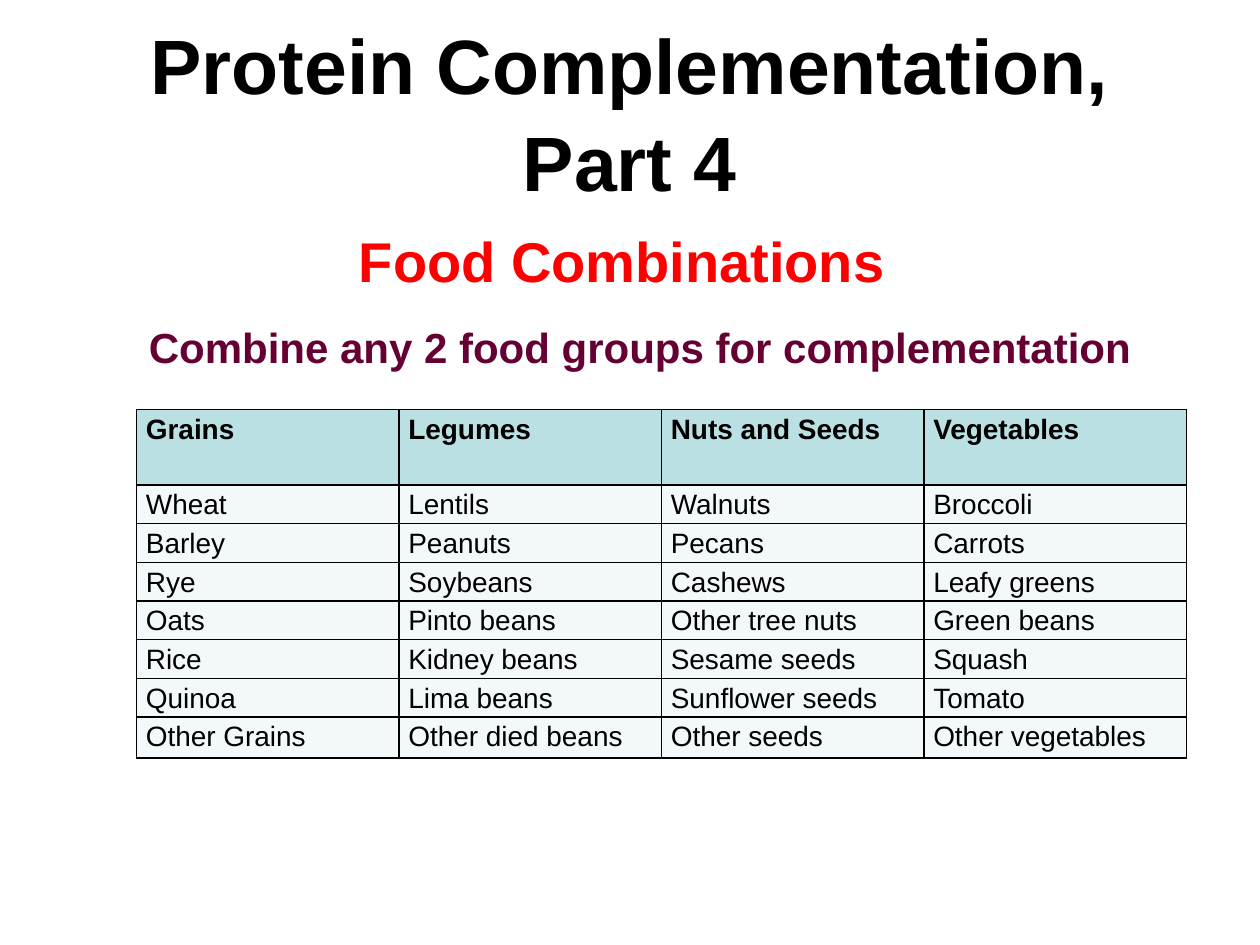
from lxml import etree
from pptx import Presentation
from pptx.dml.color import RGBColor
from pptx.enum import text
from pptx.oxml import ns
from pptx.util import Pt

BLACK = RGBColor(0x00, 0x00, 0x00)
RED = RGBColor(0xFF, 0x00, 0x00)
PLUM = RGBColor(0x66, 0x00, 0x33)
HEADER_FILL = RGBColor(0xBB, 0xE0, 0xE3)
BODY_FILL = RGBColor(0xF3, 0xF9, 0xFA)
FONT = "Arial"

TITLE = "Protein Complementation, Part 4"
SUBTITLES = [
    ("Food Combinations", (198, 126, 318, 46), 32, RED),
    ("Combine any 2 food groups for complementation", (78, 180, 606, 61), 24, PLUM),
]
FOOD_GROUPS = {
    "Grains": ["Wheat", "Barley", "Rye", "Oats", "Rice", "Quinoa", "Other Grains"],
    "Legumes": ["Lentils", "Peanuts", "Soybeans", "Pinto beans", "Kidney beans",
                "Lima beans", "Other died beans"],
    "Nuts and Seeds": ["Walnuts", "Pecans", "Cashews", "Other tree nuts",
                       "Sesame seeds", "Sunflower seeds", "Other seeds"],
    "Vegetables": ["Broccoli", "Carrots", "Leafy greens", "Green beans", "Squash",
                   "Tomato", "Other vegetables"],
}
ROW_HEIGHTS = [43.2] + [22] * 5 + [20.5, 23.5]
COLUMN_WIDTH = 150
TABLE_LEFT, TABLE_TOP = 78, 234


def write(frame, content, size, color, bold=True):
    frame.text = content
    paragraph = frame.paragraphs[0]
    font = paragraph.runs[0].font
    font.name, font.size, font.bold = FONT, Pt(size), bold
    font.color.rgb = color
    return paragraph


def add_borders(cell):
    properties = cell._tc.get_or_add_tcPr()
    for side in ("lnL", "lnR", "lnT", "lnB"):
        line = etree.SubElement(properties, ns.qn(f"a:{side}"), w=str(Pt(1)))
        fill = etree.SubElement(line, ns.qn("a:solidFill"))
        etree.SubElement(fill, ns.qn("a:srgbClr"), val=str(BLACK))


def add_title(slide):
    title = slide.shapes.title
    title.left, title.top, title.width, title.height = map(Pt, (36, 6, 648, 113.5))
    frame = title.text_frame
    frame.auto_size = text.MSO_AUTO_SIZE.NONE
    frame.vertical_anchor = text.MSO_ANCHOR.MIDDLE
    paragraph = write(frame, TITLE, 44, BLACK)
    paragraph.alignment = text.PP_ALIGN.CENTER
    paragraph.line_spacing = 1.05


def add_subtitles(slide):
    for content, box, size, color in SUBTITLES:
        frame = slide.shapes.add_textbox(*map(Pt, box)).text_frame
        frame.word_wrap = True
        write(frame, content, size, color).space_before = Pt(3)


def add_food_table(slide):
    columns = [[group, *foods] for group, foods in FOOD_GROUPS.items()]
    table = slide.shapes.add_table(
        len(ROW_HEIGHTS), len(columns), Pt(TABLE_LEFT), Pt(TABLE_TOP),
        Pt(COLUMN_WIDTH * len(columns)), Pt(sum(ROW_HEIGHTS))).table
    table.horz_banding = False
    for row, height in zip(table.rows, ROW_HEIGHTS):
        row.height = Pt(height)
    for column_index, entries in enumerate(columns):
        table.columns[column_index].width = Pt(COLUMN_WIDTH)
        for row_index, entry in enumerate(entries):
            is_header = row_index == 0
            cell = table.cell(row_index, column_index)
            cell.margin_left = cell.margin_right = Pt(5.4)
            cell.margin_top = cell.margin_bottom = 0
            add_borders(cell)
            cell.fill.solid()
            cell.fill.fore_color.rgb = HEADER_FILL if is_header else BODY_FILL
            write(cell.text_frame, entry, 16, BLACK, is_header).line_spacing = 1.15


def main():
    presentation = Presentation()
    presentation.slide_width, presentation.slide_height = Pt(720), Pt(540)
    slide = presentation.slides.add_slide(presentation.slide_layouts[5])
    add_title(slide)
    add_subtitles(slide)
    add_food_table(slide)
    presentation.save("out.pptx")


if __name__ == "__main__":
    main()
